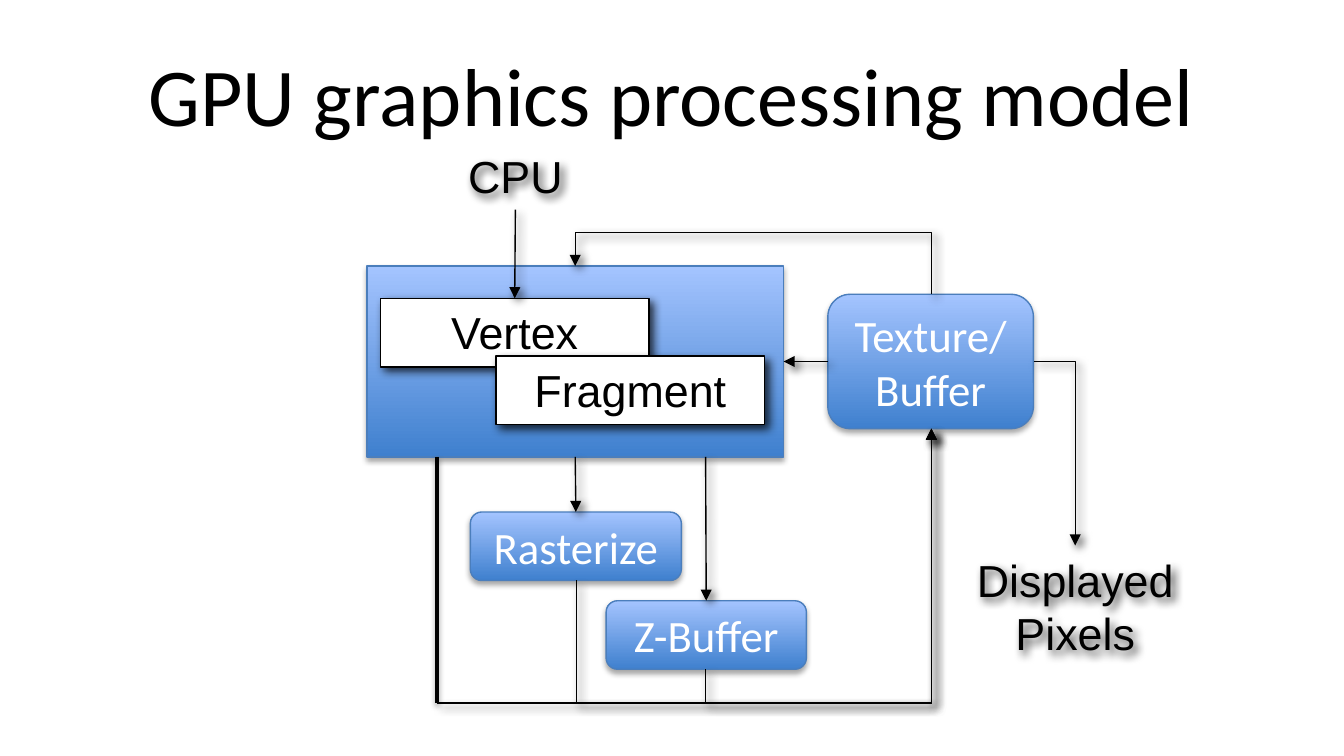
from dataclasses import dataclass
from typing import Optional

from lxml.etree import SubElement
from pptx import Presentation
from pptx.dml.color import RGBColor
from pptx.enum.shapes import MSO_CONNECTOR, MSO_SHAPE
from pptx.enum.text import MSO_ANCHOR, MSO_AUTO_SIZE, PP_ALIGN
from pptx.oxml.ns import qn
from pptx.util import Inches, Pt

COLORS = {
    "black": "000000",
    "white": "FFFFFF",
    "deep": "3F80CE",
    "light": "A4C4FF",
    "edge": "4B7EBC",
}


@dataclass(frozen=True)
class Shadow:
    opacity: int
    blur: float
    distance: float
    angle: int


@dataclass(frozen=True)
class Box:
    name: str
    kind: str
    left: float
    top: float
    width: float
    height: float
    lines: tuple[str, ...] = ()


@dataclass(frozen=True)
class Arrow:
    begin: tuple[float, float]
    end: tuple[float, float]
    source: Optional[str] = None
    target: Optional[str] = None
    sides: tuple[int, int] = (2, 0)
    weight: float = 0.75
    head: bool = True


@dataclass(frozen=True)
class Elbow:
    begin: tuple[float, float]
    end: tuple[float, float]
    detour: Optional[float] = None


SOFT = Shadow(35, 3.1, 1.8, 90)
HARD = Shadow(75, 5, 3, 45)
THICK = Shadow(38, 3.1, 1.6, 90)

BUS = 5.23
TEXTURE_BOTTOM = (6.93, 3.19)

BOXES = [
    Box("stage", "panel", 2.73, 1.98, 3.1, 1.42),
    Box("cpu", "label", 3.38, 1.06, 0.91, 0.5, ("CPU",)),
    Box("pixels", "label", 7.16, 4.06, 1.68, 0.91, ("Displayed", "Pixels")),
    Box("vertex", "shader", 2.83, 2.22, 2, 0.51, ("Vertex",)),
    Box("fragment", "shader", 3.69, 2.65, 2, 0.51, ("Fragment",)),
    Box("rasterize", "unit", 3.5, 3.81, 1.57, 0.51, ("Rasterize",)),
    Box("depth", "unit", 4.51, 4.47, 1.49, 0.51, ("Z-Buffer",)),
    Box("texture", "unit", 6.16, 2.19, 1.53, 1, ("Texture/Buffer",)),
]

ARROWS = [
    Arrow((3.83, 1.56), (3.83, 2.22), "cpu", "vertex"),
    Arrow((6.16, 2.69), (5.83, 2.69), "texture", "stage", (1, 3)),
    Arrow((5.25, 3.4), (5.25, 4.47), target="depth"),
    Arrow((4.28, 3.4), (4.29, 3.81), "stage", "rasterize"),
    Arrow((3.25, 3.4), (3.25, BUS), weight=2, head=False),
]

ELBOWS = [
    Elbow((7.69, 2.69), (8, 4.06)),
    Elbow((5.25, 4.98), TEXTURE_BOTTOM, BUS),
    Elbow((6.93, 2.19), (4.28, 1.98), 1.73),
    Elbow((4.29, 4.32), TEXTURE_BOTTOM, BUS),
    Elbow((3.25, BUS), TEXTURE_BOTTOM),
]


def color(name: str) -> RGBColor:
    return RGBColor.from_string(COLORS[name])


def add_shadow(item, shadow: Shadow) -> None:
    effects = SubElement(item._element.spPr, qn("a:effectLst"))
    outer = SubElement(effects, qn("a:outerShdw"), {
        "blurRad": str(Pt(shadow.blur)), "dist": str(Pt(shadow.distance)),
        "dir": str(shadow.angle * 60000), "algn": "ctr", "rotWithShape": "0"})
    tint = SubElement(outer, qn("a:srgbClr"), val=COLORS["black"])
    SubElement(tint, qn("a:alpha"), val=str(shadow.opacity * 1000))


def write(frame, lines: tuple[str, ...], font: str, size: int, ink: str) -> None:
    for index, line in enumerate(lines):
        para = frame.paragraphs[0] if index == 0 else frame.add_paragraph()
        para.alignment = PP_ALIGN.CENTER
        span = para.add_run()
        span.text = line
        span.font.name = font
        span.font.size = Pt(size)
        span.font.color.rgb = color(ink)


def draw_box(page, box: Box):
    area = [Inches(v) for v in (box.left, box.top, box.width, box.height)]
    blue = box.kind in ("panel", "unit")
    if box.kind == "label":
        shape = page.shapes.add_textbox(*area)
    else:
        preset = MSO_SHAPE.ROUNDED_RECTANGLE if box.kind == "unit" else MSO_SHAPE.RECTANGLE
        shape = page.shapes.add_shape(preset, *area)
        if blue:
            shape.fill.gradient()
            shape.fill.gradient_angle = 90
            for stop, name in zip(shape.fill.gradient_stops, ("deep", "light")):
                stop.color.rgb = color(name)
        else:
            shape.fill.solid()
            shape.fill.fore_color.rgb = color("white")
        shape.line.color.rgb = color("edge" if blue else "black")
        shape.line.width = Pt(0.75)
    add_shadow(shape, SOFT if blue else HARD)
    frame = shape.text_frame
    frame.word_wrap = box.kind != "label"
    frame.vertical_anchor = MSO_ANCHOR.MIDDLE if blue else MSO_ANCHOR.TOP
    if not blue:
        frame.auto_size = MSO_AUTO_SIZE.SHAPE_TO_FIT_TEXT
    write(frame, box.lines, "Calibri" if blue else "Arial", 24,
          "white" if blue else "black")
    return shape


def style_line(connector, weight: float, head: bool, shadow: Shadow) -> None:
    connector.line.color.rgb = color("black")
    connector.line.width = Pt(weight)
    if head:
        SubElement(connector.line._get_or_add_ln(), qn("a:tailEnd"), type="triangle")
    add_shadow(connector, shadow)


def draw_arrow(page, arrow: Arrow, shapes: dict) -> None:
    ends = [Inches(v) for v in arrow.begin + arrow.end]
    connector = page.shapes.add_connector(MSO_CONNECTOR.STRAIGHT, *ends)
    if arrow.source:
        connector.begin_connect(shapes[arrow.source], arrow.sides[0])
    if arrow.target:
        connector.end_connect(shapes[arrow.target], arrow.sides[1])
    style_line(connector, arrow.weight, arrow.head, HARD if arrow.head else THICK)


def draw_elbow(page, elbow: Elbow) -> None:
    (x1, y1), (x2, y2) = elbow.begin, elbow.end
    connector = page.shapes.add_connector(
        MSO_CONNECTOR.ELBOW, *[Inches(v) for v in (x1, y1, x2, y2)])
    properties = connector._element.spPr
    geometry = properties.find(qn("a:prstGeom"))
    if elbow.detour is None:
        geometry.set("prst", "bentConnector2")
    else:
        width, height = abs(y2 - y1), abs(x2 - x1)
        connector.left = Inches((x1 + x2 - width) / 2)
        connector.top = Inches((y1 + y2 - height) / 2)
        connector.width, connector.height = Inches(width), Inches(height)
        rightward = x2 > x1
        frame = properties.find(qn("a:xfrm"))
        frame.set("rot", str((90 if rightward else 270) * 60000))
        frame.set("flipH", "1" if rightward else "0")
        frame.set("flipV", "1")
        ratio = round((elbow.detour - y1) / (y2 - y1) * 100000)
        guides = geometry.find(qn("a:avLst"))
        SubElement(guides, qn("a:gd"), name="adj1", fmla=f"val {ratio}")
    style_line(connector, 0.75, True, HARD)


def main() -> None:
    deck = Presentation()
    deck.slide_width = Inches(10)
    deck.slide_height = deck.slide_width * 9 // 16
    page = deck.slides.add_slide(deck.slide_layouts[5])
    title = page.shapes.title
    title.left, title.top = Inches(0.5), Inches(0.23)
    title.width, title.height = Inches(9), Inches(0.94)
    title.text_frame.vertical_anchor = MSO_ANCHOR.MIDDLE
    write(title.text_frame, ("GPU graphics processing model",), "Calibri", 44, "black")
    shapes = {box.name: draw_box(page, box) for box in BOXES}
    for elbow in ELBOWS:
        draw_elbow(page, elbow)
    for arrow in ARROWS:
        draw_arrow(page, arrow, shapes)
    deck.save("out.pptx")


if __name__ == "__main__":
    main()
